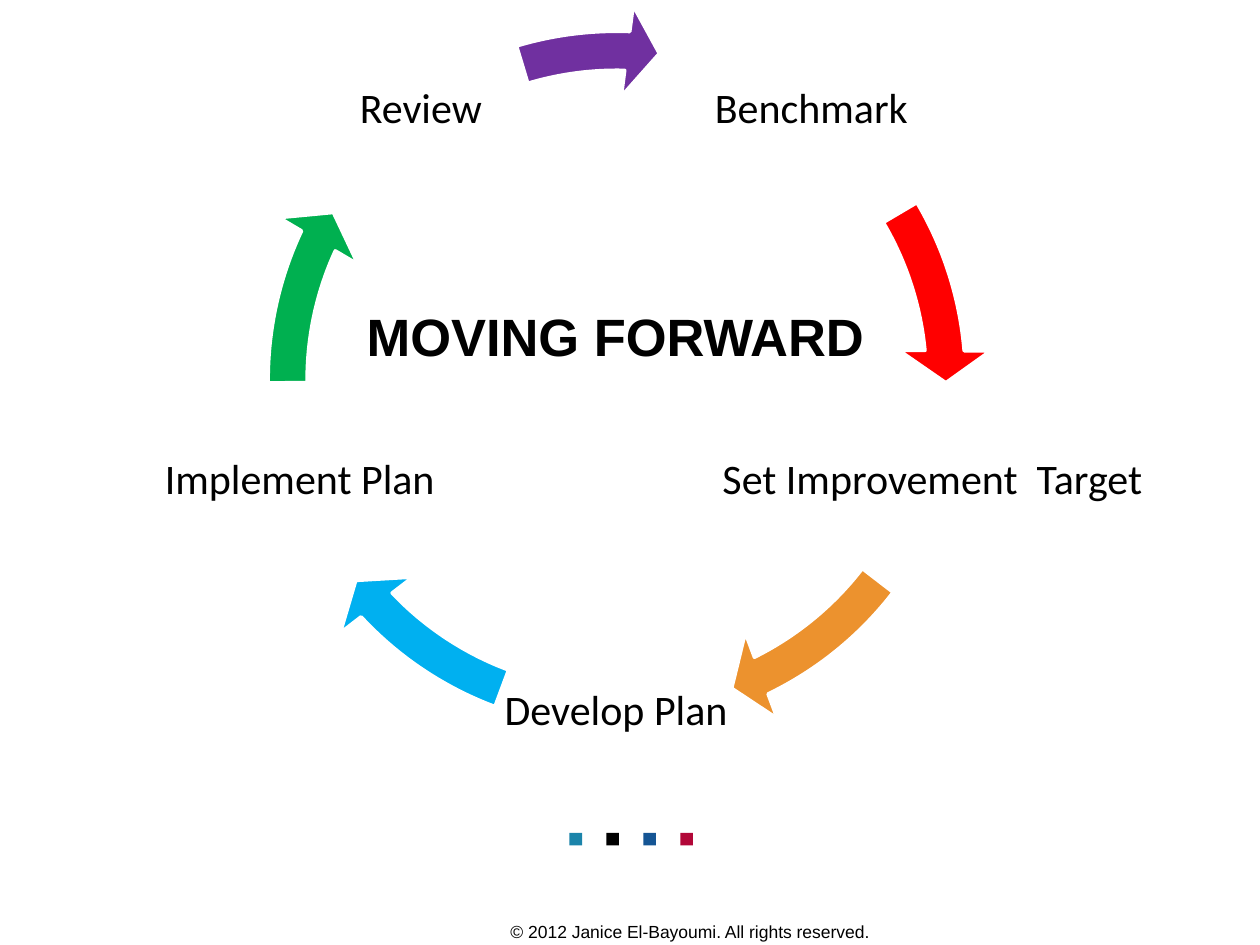
import pptx
import pptx.util
import pptx.dml.color
import pptx.enum.shapes
import pptx.enum.text

Inches = pptx.util.Inches
Pt = pptx.util.Pt
RGB = pptx.dml.color.RGBColor
SHAPE = pptx.enum.shapes.MSO_SHAPE
ALIGN = pptx.enum.text.PP_ALIGN
MIDDLE = pptx.enum.text.MSO_ANCHOR.MIDDLE

BLACK = RGB(0x00, 0x00, 0x00)
WHITE = RGB(0xFF, 0xFF, 0xFF)
RED = RGB(0xFF, 0x00, 0x00)
ORANGE = RGB(0xEC, 0x92, 0x2E)
SKY = RGB(0x00, 0xB0, 0xF0)
GREEN = RGB(0x00, 0xB0, 0x50)
PURPLE = RGB(0x70, 0x30, 0xA0)
TEAL = RGB(0x1B, 0x84, 0xAA)
NAVY = RGB(0x15, 0x55, 0x94)
WINE = RGB(0xB2, 0x07, 0x38)

STEPS = [
    ("Benchmark", 5.23, 0.08, 2.42),
    ("Set Improvement  Target", 5.66, 3.03, 3.48),
    ("Develop Plan", 3.97, 4.86, 1.84),
    ("Implement Plan", 0.93, 3.03, 2.9),
    ("Review", 2.55, 0.08, 1.58),
]
ARROWS = [
    (RED, 329.43, 354.9),
    (ORANGE, 37.54, 63.96),
    (SKY, 110.45, 136.86),
    (GREEN, 179.5, 204.98),
    (PURPLE, 253.3, 271.83),
]
STEP_HIGH = 1.58
DEGREE = 0.6


def style(para, size, face, align, bold=False):
    para.alignment = align
    para.font.size = Pt(size)
    para.font.name = face
    para.font.bold = bold
    para.font.color.rgb = BLACK


def add_shape(slide, kind, box, fill):
    shape = slide.shapes.add_shape(kind, *map(Inches, box))
    shape.shadow.inherit = False
    shape.fill.solid()
    shape.fill.fore_color.rgb = fill
    shape.line.fill.background()
    return shape


def add_label(slide, box, text, size, face):
    frame = slide.shapes.add_textbox(*map(Inches, box)).text_frame
    frame.word_wrap = True
    para = frame.paragraphs[0]
    para.text = text
    style(para, size, face, ALIGN.CENTER)
    return frame


def add_title(slide, box):
    title = slide.shapes.title
    title.left, title.top, title.width, title.height = map(Inches, box)
    title.text_frame.text = "MOVING FORWARD"
    title.text_frame.vertical_anchor = MIDDLE
    style(title.text_frame.paragraphs[0], 30, "Arial", ALIGN.LEFT, True)


def add_arrow(slide, box, fill, start, end):
    arrow = add_shape(slide, SHAPE.CIRCULAR_ARROW, box, fill)
    arrow.line.color.rgb = WHITE
    arrow.line.width = Pt(2)
    values = (0.052, 5.6 * DEGREE, end * DEGREE, start * DEGREE, 0.061)
    for index, value in enumerate(values):
        arrow.adjustments[index] = value


def add_cycle(slide, box):
    for (text, left, top, width), (fill, start, end) in zip(STEPS, ARROWS):
        frame = add_label(slide, (left, top, width, STEP_HIGH), text, 24, "Calibri")
        frame.vertical_anchor = MIDDLE
        frame.margin_left = frame.margin_right = Inches(0.03)
        frame.margin_top = frame.margin_bottom = Inches(0.03)
        frame.paragraphs[0].line_spacing = 0.9
        add_arrow(slide, box, fill, start, end)


def add_dots(slide, box):
    left, top, width, size = box
    colors = (TEAL, BLACK, NAVY, WINE)
    pitch = (width - size) / (len(colors) - 1)
    for index, fill in enumerate(colors):
        add_shape(slide, SHAPE.RECTANGLE, (left + index * pitch, top, size, size), fill)


def main():
    deck = pptx.Presentation()
    deck.slide_width = Inches(10)
    deck.slide_height = Inches(7.5)
    slide = deck.slides.add_slide(deck.slide_layouts.get_by_name("Title Only"))
    add_dots(slide, (4.52, 6.61, 0.98, 0.1))
    add_cycle(slide, (1.92, 0.04, 5.95, 5.95))
    add_title(slide, (2.81, 2.04, 4.26, 1.25))
    add_label(slide, (3.89, 7.26, 3.17, 0.24),
              "© 2012 Janice El-Bayoumi. All rights reserved.", 10, "Arial")
    deck.save("out.pptx")


if __name__ == "__main__":
    main()
